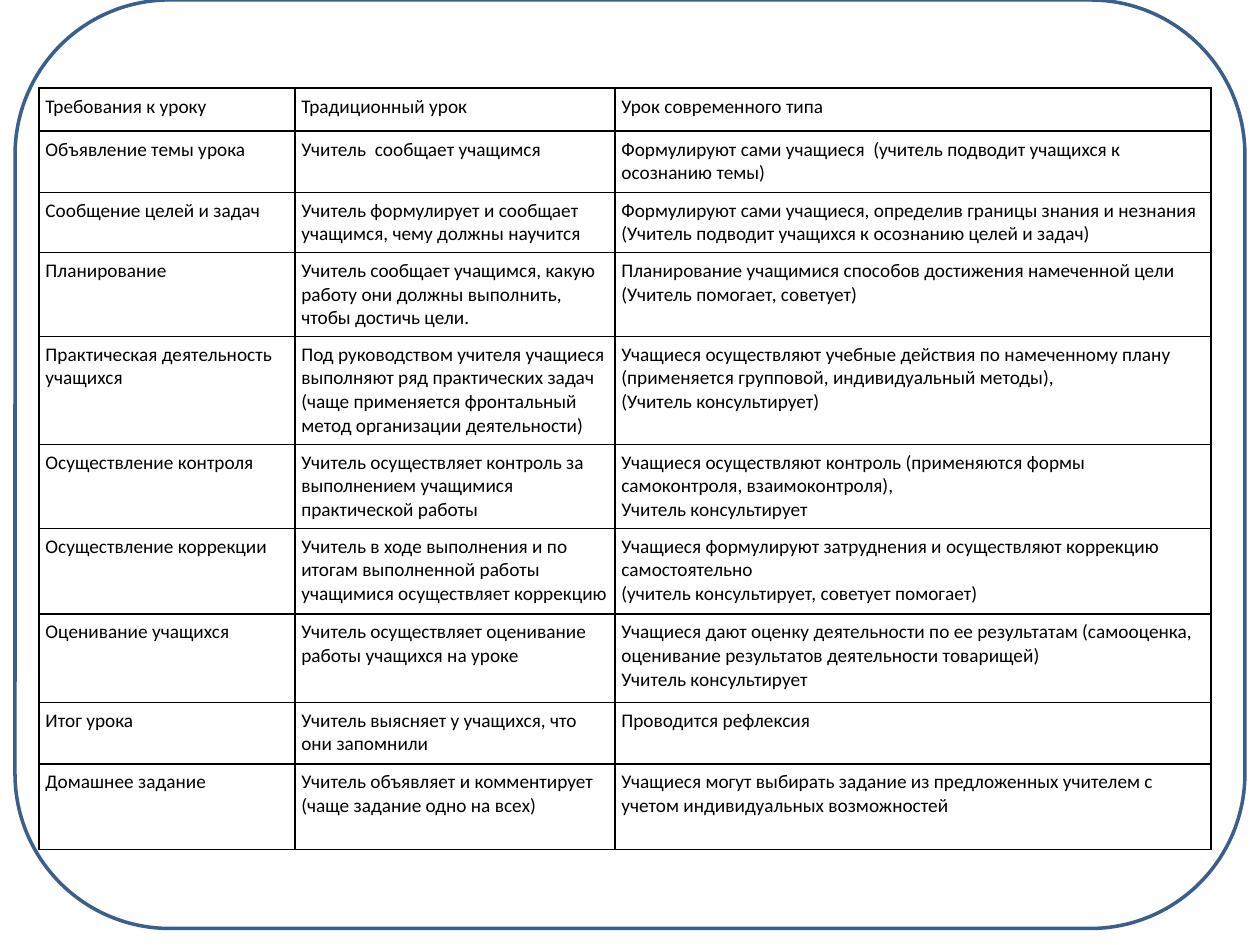
from lxml.etree import SubElement
from pptx import Presentation
from pptx.dml.color import RGBColor
from pptx.enum.shapes import MSO_SHAPE
from pptx.oxml.ns import qn
from pptx.util import Pt

# Content: requirement, traditional lesson, modern lesson ("\n" starts a paragraph)
LESSONS = [
    ("Требования к уроку", "Традиционный урок", "Урок современного типа"),
    ("Объявление темы урока",
     "Учитель  сообщает учащимся",
     "Формулируют сами учащиеся  (учитель подводит учащихся к осознанию темы)"),
    ("Сообщение целей и задач",
     "Учитель формулирует и сообщает учащимся, чему должны научится",
     "Формулируют сами учащиеся, определив границы знания и незнания\n"
     "(Учитель подводит учащихся к осознанию целей и задач)"),
    ("Планирование",
     "Учитель сообщает учащимся, какую работу они должны выполнить, чтобы достичь цели.",
     "Планирование учащимися способов достижения намеченной цели\n"
     "(Учитель помогает, советует)"),
    ("Практическая деятельность учащихся",
     "Под руководством учителя учащиеся выполняют ряд практических задач "
     "(чаще применяется фронтальный метод организации деятельности)",
     "Учащиеся осуществляют учебные действия по намеченному плану "
     "(применяется групповой, индивидуальный методы),\n"
     "(Учитель консультирует)"),
    ("Осуществление контроля",
     "Учитель осуществляет контроль за выполнением учащимися практической работы",
     "Учащиеся осуществляют контроль (применяются формы самоконтроля, взаимоконтроля),\n"
     "Учитель консультирует"),
    ("Осуществление коррекции",
     "Учитель в ходе выполнения и по итогам выполненной работы "
     "учащимися осуществляет коррекцию",
     "Учащиеся формулируют затруднения и осуществляют коррекцию самостоятельно\n"
     "(учитель консультирует, советует помогает)"),
    ("Оценивание учащихся",
     "Учитель осуществляет оценивание работы учащихся на уроке",
     "Учащиеся дают оценку деятельности по ее результатам (самооценка, "
     "оценивание результатов деятельности товарищей)\n"
     "Учитель консультирует"),
    ("Итог урока",
     "Учитель выясняет у учащихся, что они запомнили",
     "Проводится рефлексия"),
    ("Домашнее задание",
     "Учитель объявляет и комментирует (чаще задание одно на всех)",
     "Учащиеся могут выбирать задание из предложенных учителем "
     "с учетом индивидуальных возможностей"),
]

COLORS = {"paper": "FFFFFF", "frame": "3A5F8C", "ink": "000000"}
COLUMN_WIDTHS = [146.2, 182.9, 340.6]
ROW_HEIGHTS = [24.6, 34.9, 34.3, 48, 61.7, 47.7, 48.9, 50.6, 35.1, 48.9]
INSET = Pt(3.6)


def color(name):
    return RGBColor.from_string(COLORS[name])


def add_borders(cell):
    properties = cell._tc.get_or_add_tcPr()
    for position, side in enumerate(("lnL", "lnR", "lnT", "lnB")):
        border = SubElement(properties, qn(f"a:{side}"), w=str(Pt(1)))
        fill = SubElement(border, qn("a:solidFill"))
        SubElement(fill, qn("a:srgbClr"), val=COLORS["ink"])
        properties.remove(border)
        properties.insert(position, border)  # borders come before the fill


def fill_cell(cell, text):
    cell.margin_left = cell.margin_right = INSET
    cell.margin_top = cell.margin_bottom = INSET
    cell.fill.background()
    add_borders(cell)
    cell.text_frame.text = text
    for paragraph in cell.text_frame.paragraphs:
        for run in paragraph.runs:
            run.font.name = "Calibri"
            run.font.size = Pt(11)
            run.font.bold = False
            run.font.color.rgb = color("ink")


presentation = Presentation()
presentation.slide_width, presentation.slide_height = Pt(720), Pt(540)
slide = presentation.slides.add_slide(presentation.slide_layouts[6])

# Rounded frame
frame = slide.shapes.add_shape(
    MSO_SHAPE.ROUNDED_RECTANGLE, Pt(8.6), Pt(0), Pt(702.8), Pt(530.6))
frame.shadow.inherit = False
frame.fill.solid()
frame.fill.fore_color.rgb = color("paper")
frame.line.color.rgb = color("frame")
frame.line.width = Pt(2)

# Comparison table
comparison = slide.shapes.add_table(
    len(LESSONS), len(COLUMN_WIDTHS), Pt(22.4), Pt(50.4),
    Pt(sum(COLUMN_WIDTHS)), Pt(sum(ROW_HEIGHTS))).table
comparison.first_row = comparison.horz_banding = False
for column, width in zip(comparison.columns, COLUMN_WIDTHS):
    column.width = Pt(width)
for row, height, lesson in zip(comparison.rows, ROW_HEIGHTS, LESSONS):
    row.height = Pt(height)
    for cell, text in zip(row.cells, lesson):
        fill_cell(cell, text)

presentation.save("out.pptx")
